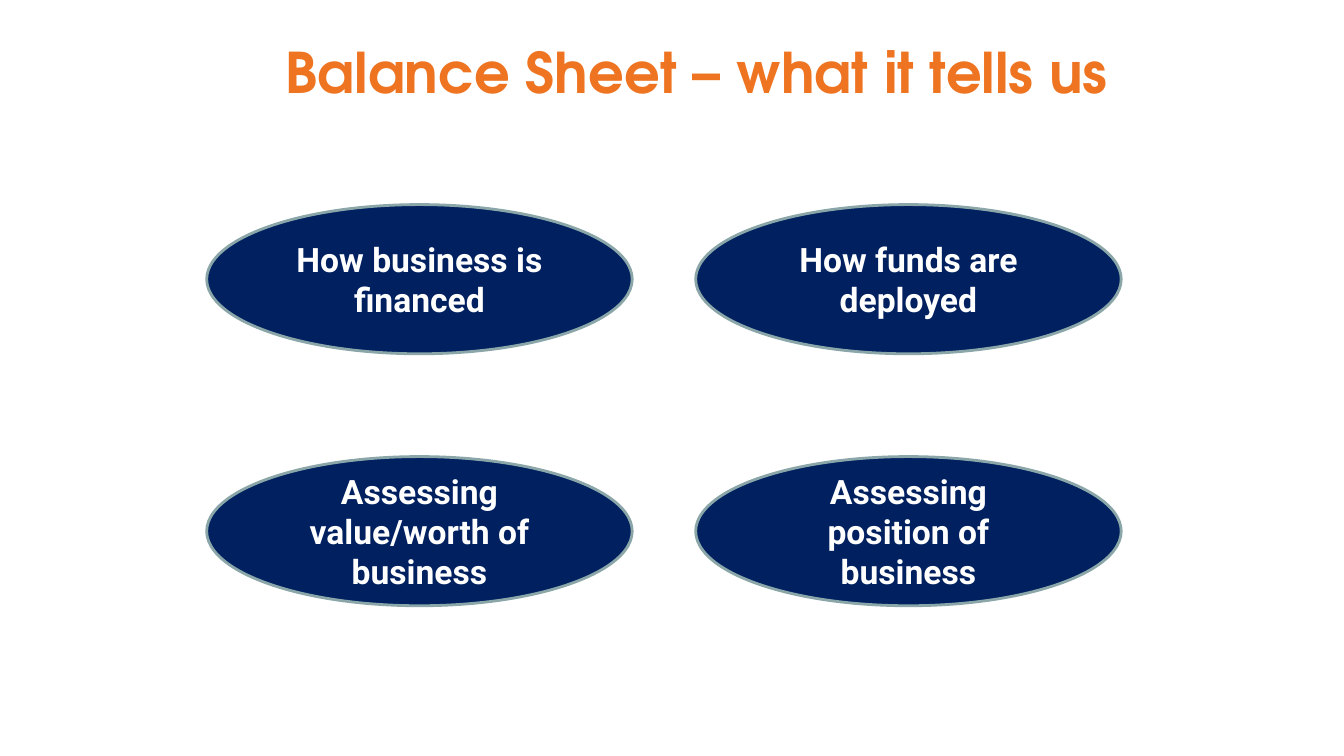
from pptx import Presentation
from pptx.dml.color import RGBColor
from pptx.enum.shapes import MSO_SHAPE as Preset
from pptx.enum.text import MSO_ANCHOR as Anchor, PP_ALIGN as Align
from pptx.util import Inches, Pt

MESSAGES = [
    ["How business is financed", "How funds are deployed"],
    ["Assessing value/worth of business", "Assessing position of business"],
]


def color(value):
    return RGBColor.from_string(value)


def write(frame, text, *, font, size, fill, bold=True):
    """Fill a text frame with one centred, formatted paragraph."""
    frame.word_wrap = True
    frame.vertical_anchor = Anchor.MIDDLE
    paragraph = frame.paragraphs[0]
    paragraph.alignment = Align.CENTER
    run = paragraph.add_run()
    run.text = text
    run.font.name = font
    run.font.size = Pt(size)
    run.font.bold = bold
    run.font.color.rgb = color(fill)


class BalanceSheetSlide:
    title_font, body_font = "TeX Gyre Adventor", "Roboto"
    orange, navy, grey, white = "EE7421", "002060", "8AA6A8", "FFFFFF"
    grid_left, grid_top = 2.05, 2.03
    column_step, row_step = 4.85, 2.5
    oval_width, oval_height = 4.22, 1.48

    def __init__(self, presentation):
        self.slide = presentation.slides.add_slide(presentation.slide_layouts[6])

    def title(self, text):
        box = self.slide.shapes.add_textbox(
            Inches(1.25), 0, Inches(11.31), Inches(1.42))
        frame = box.text_frame
        frame.margin_left = frame.margin_right = 0
        frame.margin_top = frame.margin_bottom = 0
        write(frame, text, font=self.title_font, size=40, fill=self.orange)

    def oval(self, column, row, text):
        shape = self.slide.shapes.add_shape(
            Preset.OVAL,
            Inches(self.grid_left + column * self.column_step),
            Inches(self.grid_top + row * self.row_step),
            Inches(self.oval_width), Inches(self.oval_height))
        shape.shadow.inherit = False
        shape.fill.solid()
        shape.fill.fore_color.rgb = color(self.navy)
        shape.line.color.rgb = color(self.grey)
        shape.line.width = Pt(2)
        write(shape.text_frame, text, font=self.body_font, size=24, fill=self.white)


def main():
    presentation = Presentation()
    presentation.slide_width = Inches(13.33)
    presentation.slide_height = Inches(7.5)
    page = BalanceSheetSlide(presentation)
    page.title("Balance Sheet – what it tells us")
    for row, messages in enumerate(MESSAGES):
        for column, message in enumerate(messages):
            page.oval(column, row, message)
    presentation.save("out.pptx")


if __name__ == "__main__":
    main()
